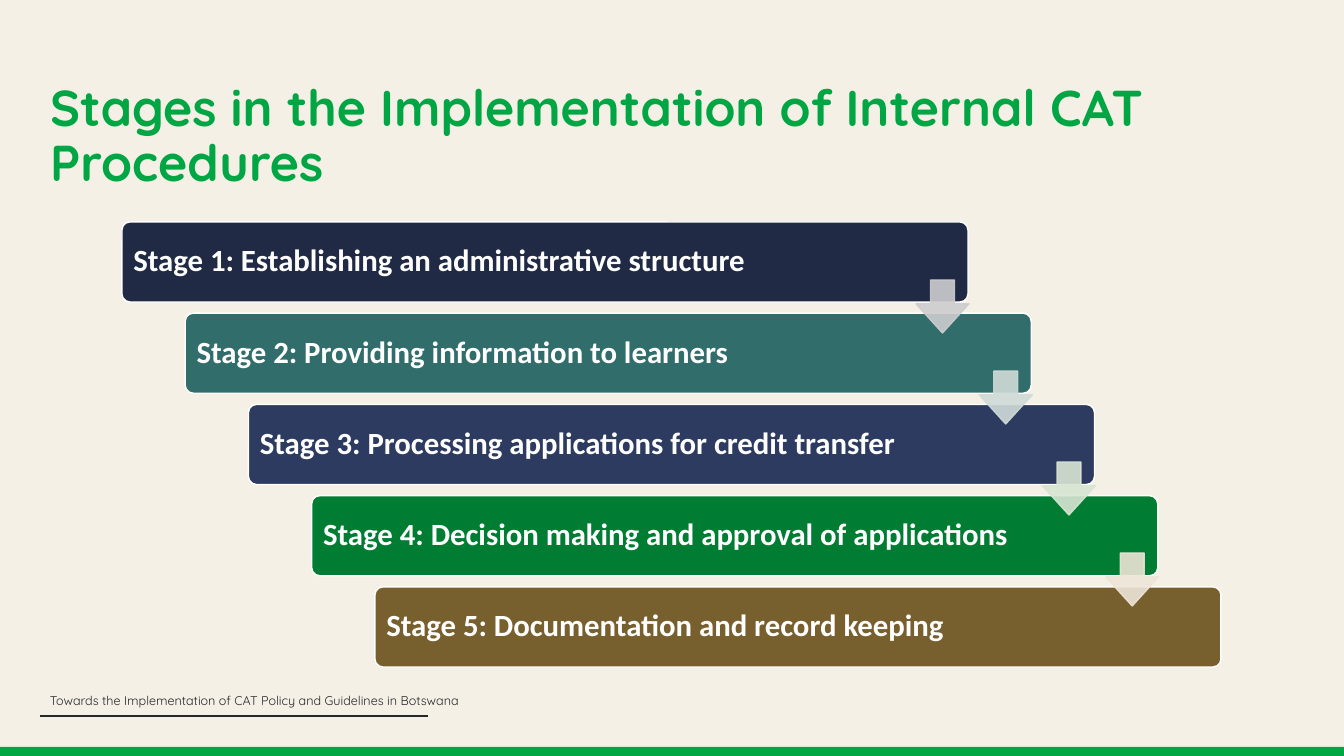
import pptx
import pptx.util
import pptx.dml.color
import pptx.enum.shapes
import pptx.enum.text
import pptx.oxml
import pptx.oxml.ns
from lxml import etree

RGB = pptx.dml.color.RGBColor
SHAPE = pptx.enum.shapes.MSO_SHAPE
ALIGN = pptx.enum.text.PP_ALIGN
ANCHOR = pptx.enum.text.MSO_ANCHOR
Pt = pptx.util.Pt
qn = pptx.oxml.ns.qn

CREAM = RGB(0xF5, 0xF0, 0xE5)
GREEN = RGB(0x00, 0xA6, 0x43)
INK = RGB(0x24, 0x28, 0x2A)
WHITE = RGB(0xFF, 0xFF, 0xFF)
STAGES = [
    ("Stage 1: Establishing an administrative structure", RGB(0x20, 0x2A, 0x44)),
    ("Stage 2: Providing information to learners", RGB(0x31, 0x6D, 0x6B)),
    ("Stage 3: Processing applications for credit transfer", RGB(0x2D, 0x3B, 0x60)),
    ("Stage 4: Decision making and approval of applications", RGB(0x00, 0x7D, 0x32)),
    ("Stage 5: Documentation and record keeping", RGB(0x78, 0x5F, 0x2E)),
]
ARROWS = [RGB(0xCD, 0xCD, 0xCF), RGB(0xCF, 0xDB, 0xD8),
          RGB(0xD8, 0xE5, 0xD3), RGB(0xED, 0xE5, 0xD8)]
STEP_X, STEP_Y = 63.25, 91.25


def px(n):
    """Turn pixels (100.8 to the inch) into EMU."""
    return round(n * 914400 / 100.8)


def add(kind, x, y, w, h, fill, line=None):
    """Add a flat preset shape, with a 1 pt outline if line is given."""
    shape = slide.shapes.add_shape(kind, px(x), px(y), px(w), px(h))
    shape.shadow.inherit = False
    shape.fill.solid()
    shape.fill.fore_color.rgb = fill
    if line is None:
        shape.line.fill.background()
    else:
        shape.line.color.rgb = line
        shape.line.width = Pt(1)
    return shape


deck = pptx.Presentation()
deck.slide_width, deck.slide_height = px(1344), px(756)
slide = deck.slides.add_slide(deck.slide_layouts[5])
slide.background.fill.solid()
slide.background.fill.fore_color.rgb = CREAM

# Bottom band and footer rule
add(SHAPE.RECTANGLE, 0, 747, 1344, 9, GREEN)
rule = slide.shapes.add_connector(
    pptx.enum.shapes.MSO_CONNECTOR.STRAIGHT, px(40), px(716), px(428), px(716))
rule.line.color.rgb = INK
rule.line.width = Pt(1.5)
etree.SubElement(rule.element.spPr, qn("a:effectLst"))

# Title
title = slide.shapes.title
title.left, title.top, title.width, title.height = px(40), px(84), px(1264), px(113)
frame = title.text_frame
frame.text = "Stages in the Implementation of Internal CAT Procedures"
frame.word_wrap = True
frame.auto_size = pptx.enum.text.MSO_AUTO_SIZE.NONE
frame.vertical_anchor = ANCHOR.BOTTOM
para = frame.paragraphs[0]
para.alignment = ALIGN.LEFT
para.line_spacing = 0.9
para.font.name, para.font.size, para.font.bold = "Quicksand", Pt(36), True
para.font.color.rgb = GREEN

# Staircase of stages
for i, (label, fill) in enumerate(STAGES):
    bar = add(SHAPE.ROUNDED_RECTANGLE, 122 + i * STEP_X, 222 + i * STEP_Y,
              846, 80, fill, WHITE)
    bar.adjustments[0] = 0.1
    frame = bar.text_frame
    frame.word_wrap = True
    frame.vertical_anchor = ANCHOR.MIDDLE
    frame.margin_left = px(9)
    frame.text = label
    para = frame.paragraphs[0]
    para.alignment = ALIGN.LEFT
    para.line_spacing = 0.9
    para.font.name, para.font.size, para.font.bold = "Calibri", Pt(22), True
    para.font.color.rgb = WHITE

# Arrows from each stage to the next
for i, tint in enumerate(ARROWS):
    arrow = add(SHAPE.DOWN_ARROW, 916 + i * STEP_X, 280 + i * 91, 53, 53, tint, tint)
    arrow.adjustments[0] = 0.45
    arrow.adjustments[1] = 0.55
    for color in arrow.element.spPr.iter(qn("a:srgbClr")):
        etree.SubElement(color, qn("a:alpha"), val="90000")

# Footer
foot = slide.shapes.add_textbox(px(40), px(691), px(480), px(19))
frame = foot.text_frame
frame.word_wrap = True
frame.vertical_anchor = ANCHOR.MIDDLE
frame.margin_top = frame.margin_bottom = 0
frame.text = "Towards the Implementation of CAT Policy and Guidelines in Botswana"
para = frame.paragraphs[0]
para.font.name, para.font.size = "Quicksand", Pt(9)
para.font.color.rgb = INK

deck.save("out.pptx")
